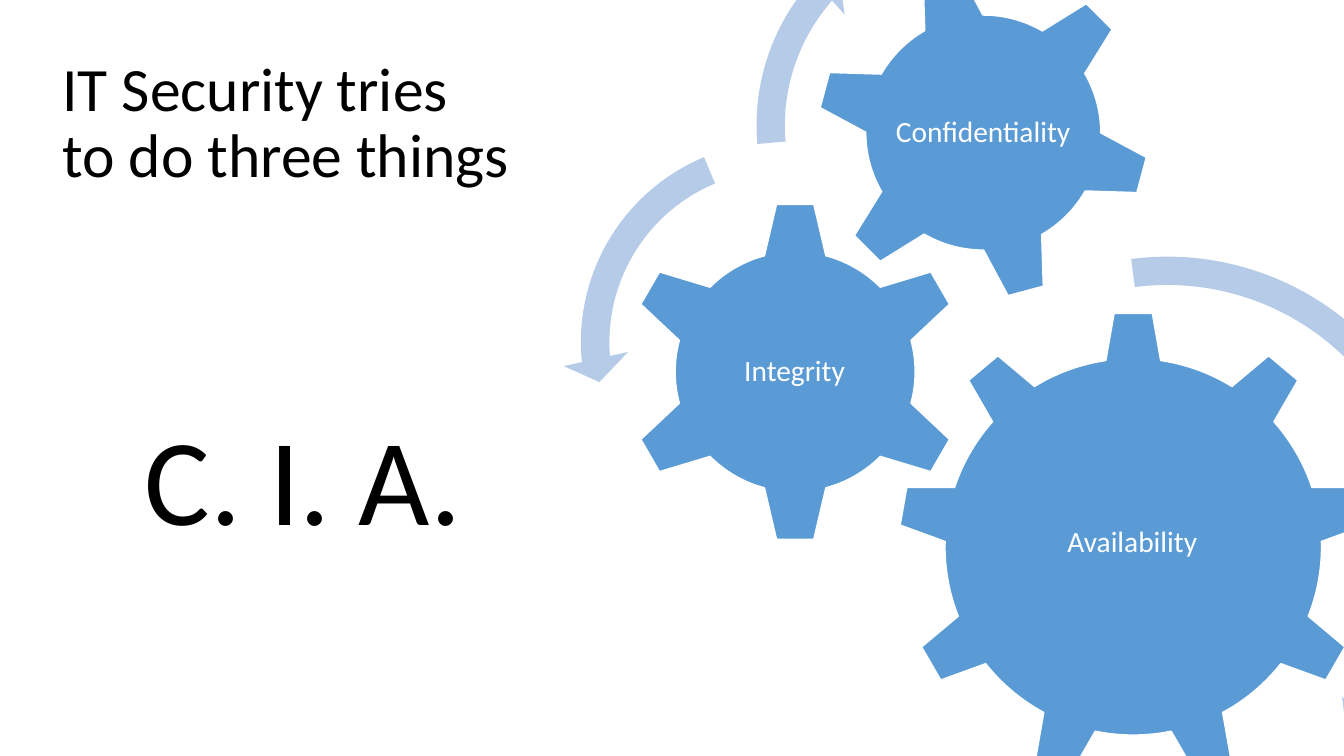
from pptx import Presentation
from pptx import util as u
from pptx.dml.color import RGBColor
from pptx.enum import shapes, text

HUES = {"gear": "5B9BD5", "arrow": "B5CBE7", "white": "FFFFFF", "black": "000000"}
FONT = "Calibri"
KIND = shapes.MSO_SHAPE
ALIGN = text.PP_ALIGN

TITLE = ("IT Security tries to do three things", (1.32, 1.3, 11.91, 3.68))
MOTTO = ("C. I. A.", (1.17, 10.01, 12.95, 4.01))
GEARS = [
    ("Availability", KIND.GEAR_9, (22.63, 7.85, 11.86), 0, (24.99, 10.64, 7.09, 6.1)),
    ("Integrity", KIND.GEAR_6, (15.72, 5.05, 8.64), 0, (17.88, 7.24, 4.29, 4.27)),
    ("Confidentiality", KIND.GEAR_6, (20.55, -0.89, 8.46), 345, (22.4, 0.97, 4.75, 4.75)),
]
ARROWS = [
    (KIND.CIRCULAR_ARROW, (21.82, 5.99, 15.19), (0.047, 2.99, 25.647, 157.605, 0.055)),
    (KIND.LEFT_CIRCULAR_ARROW, (14.17, 3.1, 11.05), (0.065, 4.3, 104.891, 148.378, 0.075)),
    (KIND.CIRCULAR_ARROW, (18.59, -2.79, 11.91), (0.06, 3.941, 133.138, 105.082, 0.07)),
]


def tint(name):
    return RGBColor.from_string(HUES[name])


def cm(box):
    return [u.Cm(n) for n in box]


def write(shape, words, size, hue, align, space=None):
    frame = shape.text_frame
    frame.text = words
    frame.word_wrap = True
    para = frame.paragraphs[0]
    para.alignment = align
    para.line_spacing = space
    font = para.runs[0].font
    font.name, font.size = FONT, u.Pt(size)
    font.color.rgb = tint(hue)
    return frame


def draw(slide, kind, spot, hue):
    left, top, side = cm(spot)
    shape = slide.shapes.add_shape(kind, left, top, side, side)
    shape.shadow.inherit = False
    shape.fill.solid()
    shape.fill.fore_color.rgb = tint(hue)
    return shape


def add_title(slide):
    words, box = TITLE
    title = slide.shapes.title
    title.left, title.top, title.width, title.height = cm(box)
    frame = write(title, words, 44, "black", ALIGN.LEFT, 0.9)
    frame.auto_size = text.MSO_AUTO_SIZE.NONE
    frame.vertical_anchor = text.MSO_ANCHOR.MIDDLE


def add_gear(slide, words, kind, spot, turn, box):
    gear = draw(slide, kind, spot, "gear")
    gear.rotation = turn
    gear.line.color.rgb = tint("white")
    gear.line.width = u.Pt(1)
    label = slide.shapes.add_textbox(*cm(box))
    frame = write(label, words, 21, "white", ALIGN.CENTER, 0.9)
    frame.vertical_anchor = text.MSO_ANCHOR.MIDDLE
    frame.margin_left = frame.margin_right = u.Cm(0.07)
    frame.margin_top = frame.margin_bottom = u.Cm(0.07)


def add_arrow(slide, kind, spot, bends):
    arrow = draw(slide, kind, spot, "arrow")
    arrow.line.fill.background()
    for i, bend in enumerate(bends):
        arrow.adjustments[i] = bend


def main():
    deck = Presentation()
    deck.slide_width, deck.slide_height = cm((33.87, 19.05))
    slide = deck.slides.add_slide(deck.slide_layouts[5])
    add_title(slide)
    for gear in GEARS:
        add_gear(slide, *gear)
    for arrow in ARROWS:
        add_arrow(slide, *arrow)
    words, box = MOTTO
    motto = slide.shapes.add_textbox(*cm(box))
    frame = write(motto, words, 88, "black", ALIGN.CENTER)
    frame.auto_size = text.MSO_AUTO_SIZE.SHAPE_TO_FIT_TEXT
    deck.save("out.pptx")


if __name__ == "__main__":
    main()
